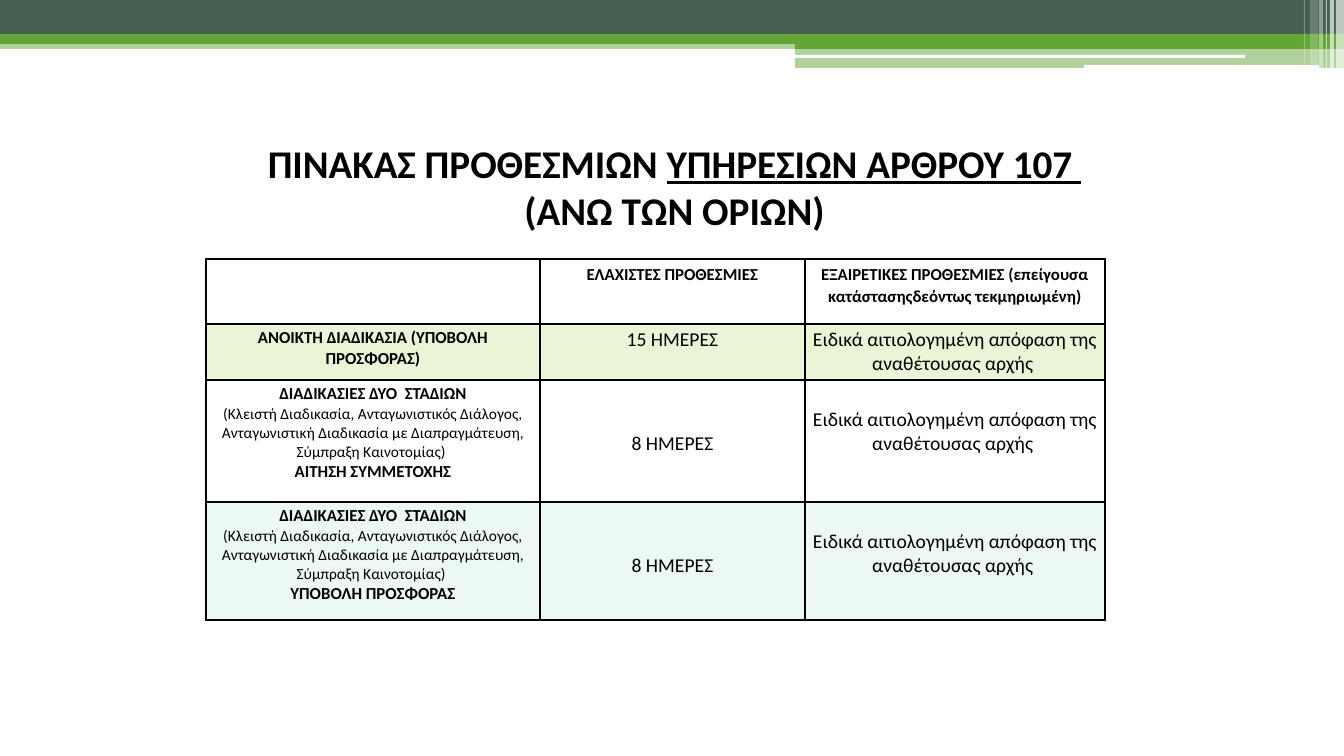
"""Build the slide of deadlines for services under article 107."""
import dataclasses
import typing

import lxml.etree
import pptx
import pptx.dml.color
import pptx.enum.shapes
import pptx.enum.text
import pptx.oxml.ns
import pptx.util

SCALE = 914400 / 100.8
FONT = "Calibri"
BLACK, WHITE, GREEN, SLATE = "000000", "FFFFFF", "63A537", "455F51"
LIME, MINT = "99CB38", "A2E0D1"
RECT = pptx.enum.shapes.MSO_SHAPE.RECTANGLE
ROUND = pptx.enum.shapes.MSO_SHAPE.ROUNDED_RECTANGLE
CENTER = pptx.enum.text.PP_ALIGN.CENTER


@dataclasses.dataclass
class Bar:
    left: int
    top: int
    width: int
    height: int
    color: str
    alpha: int = 100
    kind: typing.Any = RECT


@dataclasses.dataclass
class Line:
    text: str
    size: int = 12
    bold: bool = True


@dataclasses.dataclass
class Entry:
    lines: list[Line]
    top: int = 4
    space: float = 1.0


@dataclasses.dataclass
class Row:
    height: int
    cells: list[Entry]
    color: typing.Optional[str] = None


BARS = [
    Bar(0, 40, 1344, 9, GREEN, 50),
    Bar(0, 0, 1344, 34, SLATE),
    Bar(0, 34, 1344, 10, GREEN),
    Bar(795, 39, 549, 10, GREEN),
    Bar(795, 49, 549, 19, GREEN, 50),
    Bar(794, 55, 451, 3, WHITE, kind=ROUND),
    Bar(1084, 65, 235, 4, WHITE, kind=ROUND),
    Bar(1336, 0, 8, 68, WHITE, 65),
    Bar(1330, 0, 4, 68, WHITE, 65),
    Bar(1326, 0, 1, 68, WHITE, 60),
    Bar(1319, 0, 4, 68, WHITE, 40),
    Bar(1310, 0, 8, 65, WHITE, 20),
    Bar(1304, 0, 1, 65, WHITE, 30),
]


def days(count: int, top: int = 4) -> Entry:
    """Return the cell for a number of days."""
    return Entry([Line(f"{count} ΗΜΕΡΕΣ", 14, False)], top)


def ruling(top: int = 4) -> Entry:
    """Return the cell for a reasoned decision."""
    text = "Ειδικά αιτιολογημένη απόφαση της αναθέτουσας αρχής "
    return Entry([Line(text, 14, False)], top)


def stages(step: str) -> Entry:
    """Return the cell for a step of the two-stage procedures."""
    kinds = ("(Κλειστή Διαδικασία, Ανταγωνιστικός Διάλογος, Ανταγωνιστική "
             "Διαδικασία με Διαπραγμάτευση, Σύμπραξη Καινοτομίας) ")
    return Entry([Line("ΔΙΑΔΙΚΑΣΙΕΣ ΔΥΟ  ΣΤΑΔΙΩΝ"), Line(kinds, 11, False), Line(step)])


WIDTHS = [334, 265, 300]
ROWS = [
    Row(65, [
        Entry([]),
        Entry([Line("ΕΛΑΧΙΣΤΕΣ ΠΡΟΘΕΣΜΙΕΣ")], space=1.07),
        Entry([Line("ΕΞΑΙΡΕΤΙΚΕΣ ΠΡΟΘΕΣΜΙΕΣ (επείγουσα κατάστασηςδεόντως "
                    "τεκμηριωμένη)")], space=1.07),
    ]),
    Row(56, [Entry([Line("ΑΝΟΙΚΤΗ ΔΙΑΔΙΚΑΣΙΑ (ΥΠΟΒΟΛΗ ΠΡΟΣΦΟΡΑΣ)")]),
             days(15), ruling()], LIME),
    Row(122, [stages("ΑΙΤΗΣΗ ΣΥΜΜΕΤΟΧΗΣ"), days(8, 52), ruling(28)]),
    Row(118, [stages("ΥΠΟΒΟΛΗ ΠΡΟΣΦΟΡΑΣ"), days(8, 52), ruling(28)], MINT),
]


def px(count: int) -> pptx.util.Emu:
    """Turn px into EMU."""
    return pptx.util.Emu(round(count * SCALE))


def tint(fill: typing.Any, node: typing.Any, color: str, alpha: int = 100) -> None:
    """Fill solidly, with an opacity in percent."""
    fill.solid()
    fill.fore_color.rgb = pptx.dml.color.RGBColor.from_string(color)
    if alpha < 100:
        shade = next(node.iter(pptx.oxml.ns.qn("a:srgbClr")))
        lxml.etree.SubElement(shade, pptx.oxml.ns.qn("a:alpha"), val=str(alpha * 1000))


def style(run: typing.Any, size: int, bold: bool, under: bool = False) -> None:
    """Format a run of text."""
    font = run.font
    font.name, font.size = FONT, pptx.util.Pt(size)
    font.bold, font.underline = bold, under
    font.color.rgb = pptx.dml.color.RGBColor.from_string(BLACK)


def draw_bar(slide: typing.Any, bar: Bar) -> None:
    """Draw one bar of the top band."""
    shape = slide.shapes.add_shape(
        bar.kind, px(bar.left), px(bar.top), px(bar.width), px(bar.height))
    shape.shadow.inherit = False
    shape.line.fill.background()
    tint(shape.fill, shape.element.spPr, bar.color, bar.alpha)


def draw_title(slide: typing.Any) -> None:
    """Write the title."""
    frame = slide.shapes.add_textbox(px(221), px(142), px(907), px(89)).text_frame
    frame.word_wrap = True
    frame.vertical_anchor = pptx.enum.text.MSO_ANCHOR.MIDDLE
    para = frame.paragraphs[0]
    para.alignment = CENTER
    para.text = "ΠΙΝΑΚΑΣ ΠΡΟΘΕΣΜΙΩΝ "
    para.add_run().text = "ΥΠΗΡΕΣΙΩΝ ΑΡΘΡΟΥ 107 "
    para.add_line_break()
    para.add_run().text = "(ΑΝΩ ΤΩΝ ΟΡΙΩΝ)"
    for run, under in zip(para.runs, (False, True, False)):
        style(run, 28, True, under)


def add_edges(cell: typing.Any) -> None:
    """Give a cell thin black borders."""
    qn = pptx.oxml.ns.qn
    props = cell._tc.get_or_add_tcPr()
    for spot, side in enumerate(("lnL", "lnR", "lnT", "lnB")):
        edge = lxml.etree.Element(qn(f"a:{side}"), w=str(pptx.util.Pt(1)))
        fill = lxml.etree.SubElement(edge, qn("a:solidFill"))
        lxml.etree.SubElement(fill, qn("a:srgbClr"), val=BLACK)
        props.insert(spot, edge)


def fill_cell(cell: typing.Any, entry: Entry, color: typing.Optional[str]) -> None:
    """Write and format one table cell."""
    cell.margin_left = cell.margin_right = px(7)
    cell.margin_top, cell.margin_bottom = px(entry.top), px(4)
    if color:
        tint(cell.fill, cell._tc, color, 20)
    else:
        cell.fill.background()
    add_edges(cell)
    cell.text_frame.text = "\n".join(line.text for line in entry.lines)
    for para, line in zip(cell.text_frame.paragraphs, entry.lines):
        para.alignment, para.line_spacing = CENTER, entry.space
        style(para.runs[0], line.size, line.bold)


def draw_table(slide: typing.Any) -> None:
    """Draw the table of deadlines."""
    high = sum(row.height for row in ROWS)
    table = slide.shapes.add_table(
        len(ROWS), len(WIDTHS), px(206), px(259), px(sum(WIDTHS)), px(high)).table
    table.first_row = table.horz_banding = False
    for column, width in zip(table.columns, WIDTHS):
        column.width = px(width)
    for line, row in zip(table.rows, ROWS):
        line.height = px(row.height)
        for cell, entry in zip(line.cells, row.cells):
            fill_cell(cell, entry, row.color)


def main() -> None:
    """Build and save the deck."""
    deck = pptx.Presentation()
    deck.slide_width, deck.slide_height = px(1344), px(756)
    slide = deck.slides.add_slide(deck.slide_layouts[6])
    for bar in BARS:
        draw_bar(slide, bar)
    draw_title(slide)
    draw_table(slide)
    deck.save("out.pptx")


if __name__ == "__main__":
    main()
